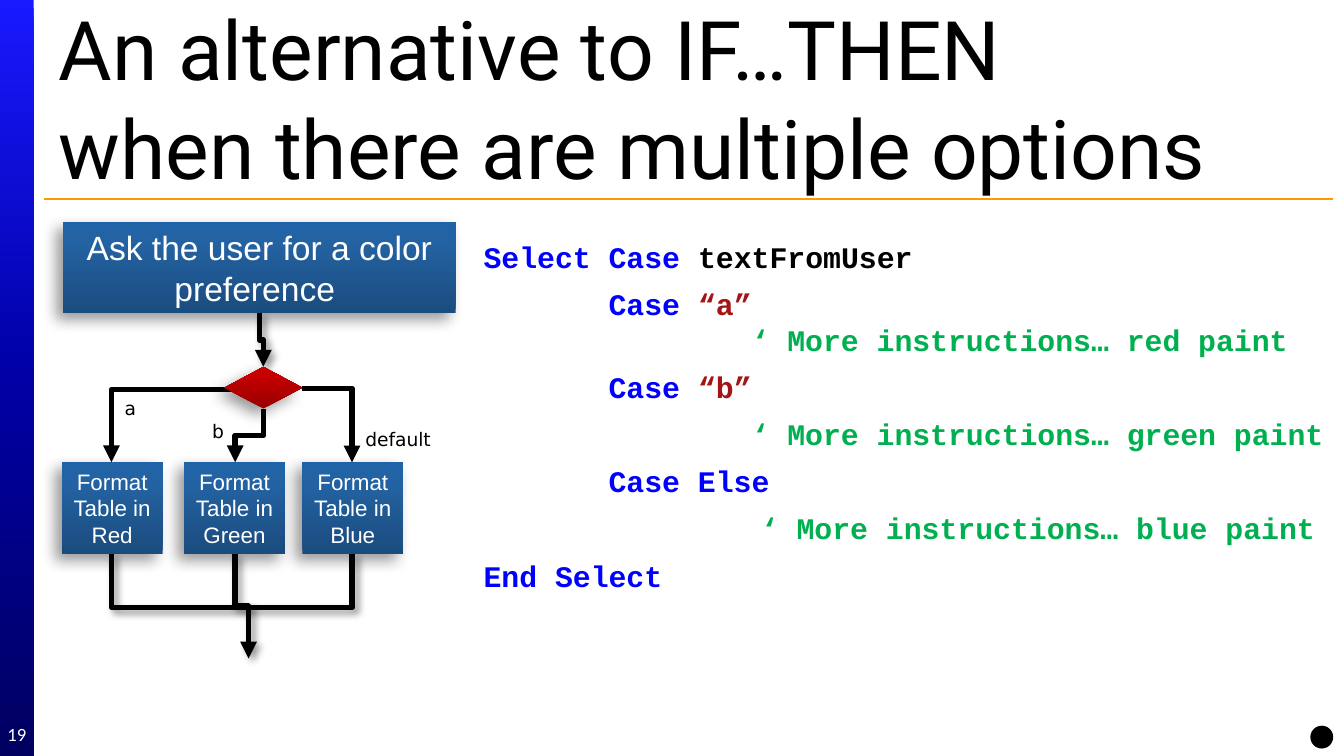
import copy
import dataclasses

import pptx
import pptx.dml.color
import pptx.enum.shapes
import pptx.enum.text
import pptx.oxml
import pptx.oxml.ns
import pptx.util

Inches = pptx.util.Inches
Pt = pptx.util.Pt
RGB = pptx.dml.color.RGBColor.from_string
SHAPE = pptx.enum.shapes.MSO_SHAPE
CONNECTOR = pptx.enum.shapes.MSO_CONNECTOR
ALIGN = pptx.enum.text.PP_ALIGN
ANCHOR = pptx.enum.text.MSO_ANCHOR
qn = pptx.oxml.ns.qn
NS = pptx.oxml.ns.nsdecls("a")


@dataclasses.dataclass(frozen=True)
class Theme:
    black: str = "000000"
    white: str = "FFFFFF"
    rule: str = "FF9900"
    keyword: str = "0000FF"
    string: str = "A31515"
    comment: str = "00B050"
    sidebar: tuple = ((0, "1919FF"), (50, "0000A5"), (100, "000060"))
    process: tuple = ((0, "1B4C7E"), (80, "2363A3"), (100, "2063A6"))
    decision: tuple = ((0, "980000"), (80, "C60000"), (100, "C70000"))
    title_size: int = 44
    question_size: int = 18
    code_size: int = 16
    step_size: int = 12
    label_size: int = 10


theme = Theme()


def add_effects(shape, shadow=None):
    """Append the effect list; shadow is (blur pt, distance pt, angle), None for none."""
    effects = pptx.oxml.parse_xml(f"<a:effectLst {NS}/>")
    if shadow:
        blur, distance, angle = shadow
        effects.append(pptx.oxml.parse_xml(
            f'<a:outerShdw {NS} blurRad="{Pt(blur)}" dist="{Pt(distance)}" '
            f'dir="{angle * 60000}" algn="ctr" rotWithShape="0">'
            f'<a:srgbClr val="{theme.black}"><a:alpha val="40000"/></a:srgbClr>'
            f'</a:outerShdw>'))
    shape._element.spPr.append(effects)


def add_block(kind, box, stops, angle, shadow=None, text="", size=theme.step_size):
    """Add a borderless gradient shape with centred white text."""
    block = slide.shapes.add_shape(kind, *map(Inches, box))
    colours = "".join(f'<a:gs pos="{position * 1000}"><a:srgbClr val="{colour}"/></a:gs>'
                      for position, colour in stops)
    block._element.spPr.append(pptx.oxml.parse_xml(
        f'<a:gradFill {NS} rotWithShape="1"><a:gsLst>{colours}</a:gsLst>'
        f'<a:lin ang="{angle * 60000}" scaled="0"/></a:gradFill>'))
    block.line.fill.background()
    add_effects(block, shadow)
    frame = block.text_frame
    frame.word_wrap = True
    frame.vertical_anchor = ANCHOR.MIDDLE
    frame.margin_left = frame.margin_right = Inches(0.05)
    frame.margin_top = frame.margin_bottom = Inches(0.05)
    frame.text = text
    paragraph = frame.paragraphs[0]
    paragraph.alignment = ALIGN.CENTER
    for run in paragraph.runs:
        run.font.name = "Arial"
        run.font.size = Pt(size)
        run.font.color.rgb = RGB(theme.white)


deck = pptx.Presentation()
deck.slide_width = Inches(10)
deck.slide_height = Inches(5.625)
slide = deck.slides.add_slide(deck.slide_layouts[6])

add_block(SHAPE.RECTANGLE, (0, 0, 0.25, 5.625), theme.sidebar, 90)
title_rule = slide.shapes.add_connector(
    CONNECTOR.STRAIGHT, Inches(0.33), Inches(1.48), Inches(9.92), Inches(1.48))
title_rule.line.color.rgb = RGB(theme.rule)
title_rule.line.width = Pt(0.75)
add_effects(title_rule)

# Code listing: the coloured parts of each paragraph, "\n" for a line break
code_lines = [
    [("Select Case", theme.keyword), (" textFromUser", theme.black)],
    [("       Case ", theme.keyword), ("“a”", theme.string), ("\n", None),
     ("               ‘ More instructions… red paint", theme.comment)],
    [("       Case ", theme.keyword), ("“b”", theme.string)],
    [("               ‘ More instructions… green paint", theme.comment)],
    [("       Case Else", theme.keyword)],
    [("\t        ‘ More instructions… blue paint", theme.comment)],
    [("End Select", theme.keyword)],
]
code = slide.shapes.add_textbox(
    Inches(3.5), Inches(1.73), Inches(6.5), Inches(3.39)).text_frame
code.word_wrap = True
for index, parts in enumerate(code_lines):
    line = code.add_paragraph() if index else code.paragraphs[0]
    line.space_before = Pt(6 if index else 0)
    if parts[0][0].startswith("\t"):
        line._p.get_or_add_pPr().append(pptx.oxml.parse_xml(
            f'<a:tabLst {NS}><a:tab pos="{Inches(1)}" algn="l"/></a:tabLst>'))
    for text, colour in parts:
        if text == "\n":
            line.add_line_break()
            line._p.findall(qn("a:br"))[-1].append(copy.deepcopy(run.font._element))
            continue
        run = line.add_run()
        run.text = text
        run.font.name = "Courier New"
        run.font.size = Pt(theme.code_size)
        run.font.bold = True
        run.font.color.rgb = RGB(colour)

# Flowchart
block_shadow = (8, 5, 135)
line_shadow = (4, 3, 45)
add_block(SHAPE.FLOWCHART_PROCESS, (0.47, 1.65, 2.92, 0.68), theme.process, 270,
          block_shadow, "Ask the user for a color preference ", theme.question_size)
for left, colour_name in ((0.46, "Red"), (1.37, "Green"), (2.25, "Blue")):
    add_block(SHAPE.FLOWCHART_PROCESS, (left, 3.44, 0.75, 0.68), theme.process, 270,
              block_shadow, f"Format Table in {colour_name}")

# start, end, number of bends, leaves downwards, arrowhead, shadow
flows = [
    ((1.93, 2.33), (1.96, 2.73), 2, True, True, line_shadow),
    ((1.75, 4.12), (1.85, 4.9), 2, True, True, line_shadow),
    ((0.83, 4.12), (1.83, 4.52), 1, True, False, line_shadow),
    ((2.62, 4.12), (1.83, 4.52), 1, True, False, line_shadow),
    ((1.79, 2.9), (0.83, 3.44), 1, False, True, None),
    ((1.96, 3.04), (1.75, 3.44), 2, True, True, None),
    ((2.25, 2.89), (2.62, 3.44), 1, False, True, None),
]
for (x1, y1), (x2, y2), bends, downwards, arrow, shadow in flows:
    rotation = 0
    if downwards:
        # A quarter turn about the midpoint makes the first leg vertical
        rotation = 270 if x2 > x1 else 90
        turn = -1 if x2 > x1 else 1
        mid_x, mid_y = (x1 + x2) / 2, (y1 + y2) / 2
        half_run, half_rise = turn * (y2 - y1) / 2, abs(x2 - x1) / 2
        x1, x2 = mid_x - half_run, mid_x + half_run
        y1, y2 = mid_y - half_rise, mid_y + half_rise
    flow = slide.shapes.add_connector(CONNECTOR.ELBOW, *map(Inches, (x1, y1, x2, y2)))
    properties = flow._element.spPr
    properties.find(qn("a:xfrm")).set("rot", str(rotation * 60000))
    properties.find(qn("a:prstGeom")).set("prst", f"bentConnector{bends + 1}")
    flow.line.color.rgb = RGB(theme.black)
    flow.line.width = Pt(3)
    if arrow:
        properties.find(qn("a:ln")).append(
            pptx.oxml.parse_xml(f'<a:tailEnd {NS} type="triangle"/>'))
    add_effects(flow, shadow)

add_block(SHAPE.FLOWCHART_DECISION, (1.67, 2.73, 0.58, 0.31), theme.decision, 270,
          block_shadow)

# Title, branch labels and page number
captions = [
    ("An alternative to IF…THEN\vwhen there are multiple options",
     (0.34, 0.06, 9.58, 1.33), "Roboto", theme.title_size, theme.black),
    ("a", (0.83, 2.9, 0.33, 0.27), "DejaVu Sans", theme.label_size, theme.black),
    ("b", (1.48, 3.07, 0.33, 0.27), "DejaVu Sans", theme.label_size, theme.black),
    ("default", (2.62, 3.13, 0.75, 0.27), "DejaVu Sans", theme.label_size, theme.black),
    ("19", (0, 5.31, 0.25, 0.3), "Calibri", theme.label_size, theme.white),
]
for text, box, font, size, colour in captions:
    caption = slide.shapes.add_textbox(*map(Inches, box)).text_frame
    caption.word_wrap = True
    caption.vertical_anchor = ANCHOR.MIDDLE
    caption.text = text
    if colour == theme.white:
        caption.margin_left = caption.margin_right = 0
        caption.paragraphs[0].alignment = ALIGN.CENTER
    for run in caption.paragraphs[0].runs:
        run.font.name = font
        run.font.size = Pt(size)
        run.font.color.rgb = RGB(colour)

corner_dot = slide.shapes.add_shape(
    SHAPE.OVAL, Inches(9.75), Inches(5.4), Inches(0.17), Inches(0.17))
corner_dot.fill.solid()
corner_dot.fill.fore_color.rgb = RGB(theme.black)
corner_dot.line.fill.background()
corner_dot.shadow.inherit = False

deck.save("out.pptx")
